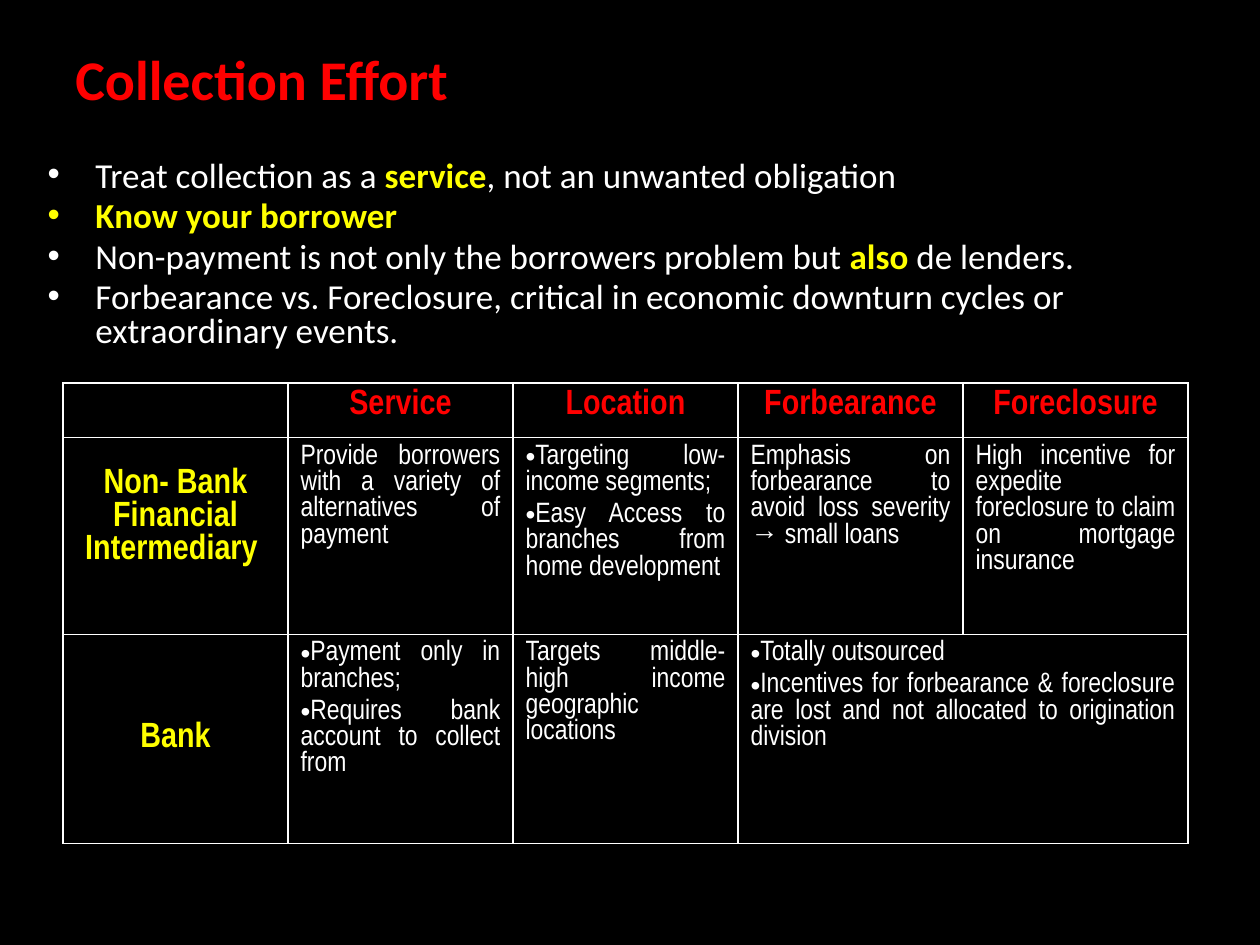
"""Build the Collection Effort slide: title, bullet list and comparison table."""
from lxml.etree import SubElement
from pptx import Presentation
from pptx.dml.color import RGBColor as RGB
from pptx.enum.text import MSO_ANCHOR as ANCHOR, PP_ALIGN as ALIGN
from pptx.oxml.ns import qn
from pptx.util import Inches, Pt

THEME = dict(
    back="000000", text="FFFFFF", head="FF0000", accent="FFFF00", line="FFFFFF",
    title_pt=32, body_pt=20, cell_pt=16, line_pt=1,
    body_font="Calibri", table_font="Arial Narrow",
)
TITLE = "Collection Effort"
POINTS = [
    ["Treat collection as a ", ("service",), ", not an unwanted obligation"],
    [("Know your borrower",)],
    ["Non-payment is not only the borrowers problem but ", ("also",), " de lenders."],
    ["Forbearance vs. Foreclosure, critical in economic downturn cycles or extraordinary events."],
]
HEADS = ["", "Service", "Location", "Forbearance", "Foreclosure"]
ROWS = [
    (["Non- Bank", "Financial Intermediary "], [
        ["Provide borrowers with a variety of alternatives of payment"],
        ["Targeting low-income segments;", "Easy Access to branches from home development"],
        ["Emphasis on forbearance to avoid loss severity → small loans"],
        ["High incentive for expedite foreclosure to claim on mortgage insurance"],
    ]),
    (["Bank"], [
        ["Payment only in branches;", "Requires bank account to collect from"],
        ["Targets middle-high income geographic locations"],
        ["Totally outsourced",
         "Incentives for forbearance & foreclosure are lost and not allocated to origination division"],
    ]),
]
TITLE_BOX = (0.5, 0.3, 9, 1.25)
BODY_BOX = (0.28, 1.23, 9.5, 1.74)
TABLE_BOX = (0.5, 3.04, 8.93, 3.63)
ROW_HEIGHTS = [0.41, 1.56, 1.66]


def write(tf, paras, *, size, font, color=THEME["text"], bold=False, align=ALIGN.LEFT,
          spacing=1.0, before=0.2, bullet=False, indent=0):
    """Fill a text frame; a run given as a tuple is emphasised."""
    tf.word_wrap = True
    for i, runs in enumerate(paras):
        p = tf.paragraphs[0] if i == 0 else tf.add_paragraph()
        p.alignment, p.line_spacing, p.space_before = align, spacing, Pt(size * before)
        if bullet:
            pPr = p._p.get_or_add_pPr()
            pPr.set("marL", str(Inches(indent)))
            pPr.set("indent", str(-Inches(indent)))
            SubElement(pPr, qn("a:buFont")).set("typeface", "Arial")
            SubElement(pPr, qn("a:buChar")).set("char", "•")
        for run in [runs] if isinstance(runs, str) else runs:
            strong = isinstance(run, tuple)
            r = p.add_run()
            r.text = run[0] if strong else run
            r.font.size, r.font.name, r.font.bold = Pt(size), font, bold or strong
            r.font.color.rgb = RGB.from_string(THEME["accent"] if strong else color)


def text_box(s, box, paras, **fmt):
    """Add a text box holding formatted paragraphs."""
    tf = s.shapes.add_textbox(*map(Inches, box)).text_frame
    write(tf, paras, **fmt)


def frame_cell(cell):
    """Give a cell plain borders and no fill."""
    tcPr = cell._tc.get_or_add_tcPr()
    for side in ("lnL", "lnR", "lnT", "lnB"):
        ln = SubElement(tcPr, qn(f"a:{side}"), w=str(Pt(THEME["line_pt"])))
        SubElement(SubElement(ln, qn("a:solidFill")), qn("a:srgbClr")).set("val", THEME["line"])
    cell.fill.background()


def add_table(s):
    """Add the comparison table."""
    tbl = s.shapes.add_table(len(ROW_HEIGHTS), len(HEADS), *map(Inches, TABLE_BOX)).table
    tbl.first_row = tbl.horz_banding = False
    for col in tbl.columns:
        col.width = Inches(TABLE_BOX[2] / len(HEADS))
    for row, height in zip(tbl.rows, ROW_HEIGHTS):
        row.height = Inches(height)
    for cell in tbl.iter_cells():
        frame_cell(cell)
    tbl.cell(2, 3).merge(tbl.cell(2, 4))

    label = dict(size=THEME["body_pt"], font=THEME["table_font"], bold=True, align=ALIGN.CENTER)
    for c, head in enumerate(HEADS):
        if head:
            write(tbl.cell(0, c).text_frame, [head], color=THEME["head"], **label)
    for r, (name, cells) in enumerate(ROWS, 1):
        cell = tbl.cell(r, 0)
        cell.vertical_anchor = ANCHOR.MIDDLE
        write(cell.text_frame, name, color=THEME["accent"],
              before=0 if len(name) > 1 else 0.2, **label)
        for c, paras in enumerate(cells, 1):
            write(tbl.cell(r, c).text_frame, paras, size=THEME["cell_pt"],
                  font=THEME["table_font"], align=ALIGN.JUSTIFY, bullet=len(paras) > 1)
    tbl.cell(1, 0).margin_bottom = Inches(0.35)


def main():
    """Assemble and save the slide."""
    prs = Presentation()
    prs.slide_width, prs.slide_height = Inches(10), Inches(7.5)
    s = prs.slides.add_slide(prs.slide_layouts[6])
    s.background.fill.solid()
    s.background.fill.fore_color.rgb = RGB.from_string(THEME["back"])
    text_box(s, TITLE_BOX, [TITLE], size=THEME["title_pt"], font=THEME["body_font"],
             color=THEME["head"], bold=True, before=0)
    text_box(s, BODY_BOX, POINTS, size=THEME["body_pt"], font=THEME["body_font"],
             spacing=0.8, bullet=True, indent=0.38)
    add_table(s)
    prs.save("out.pptx")


if __name__ == "__main__":
    main()
